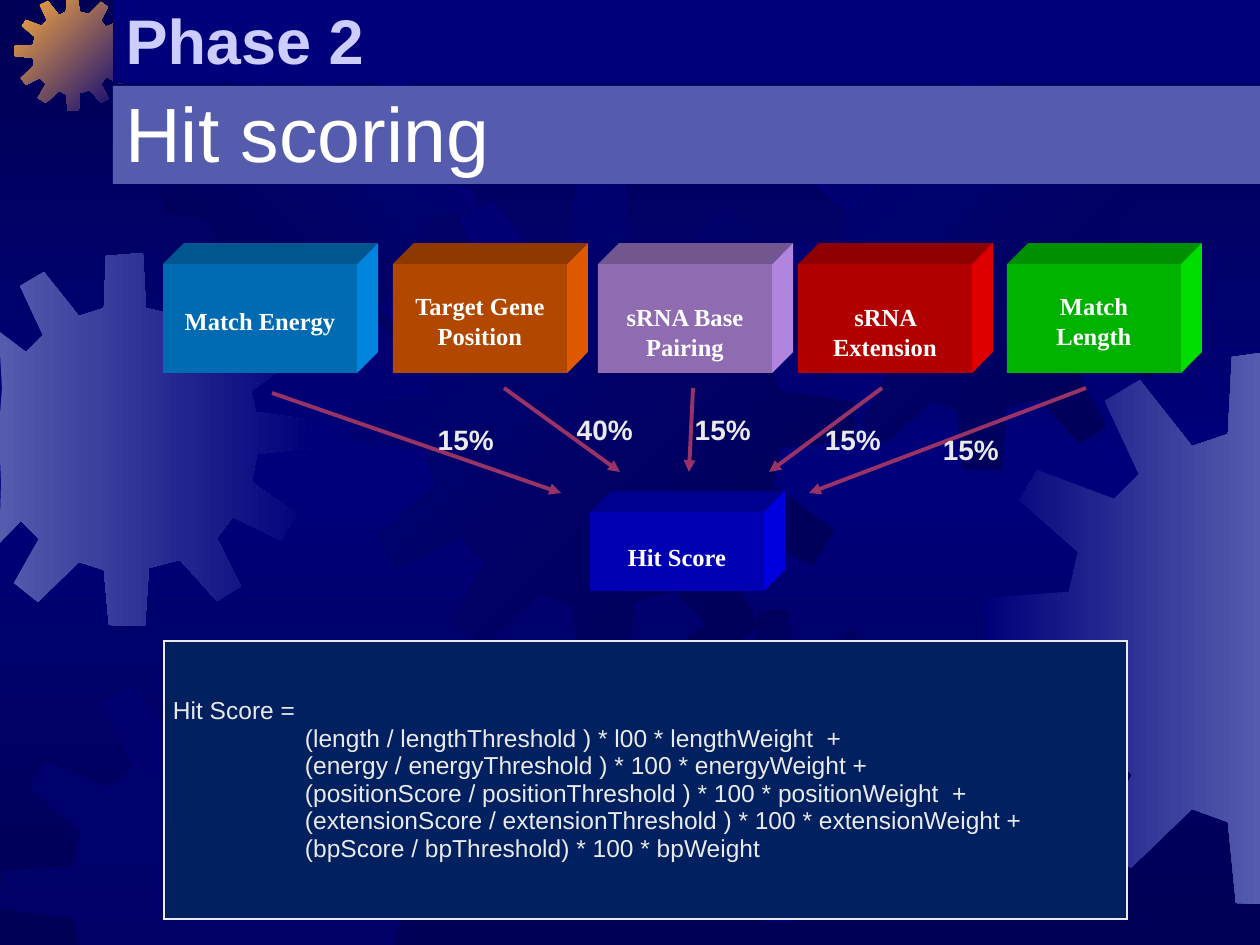
from copy import deepcopy

from lxml.etree import SubElement as Sub
from pptx import Presentation
from pptx.dml.color import RGBColor as RGB
from pptx.enum.shapes import MSO_CONNECTOR as Link, MSO_SHAPE as Kind
from pptx.enum.text import MSO_ANCHOR as Anchor, MSO_AUTO_SIZE as Auto, PP_ALIGN as Align
from pptx.oxml.ns import qn
from pptx.util import Pt

PX = 914400 / 126
WIDE, HIGH = 1260, 945
DEPTH = 21

DARK = RGB(0x00, 0x00, 0x54)
NAVY = RGB(0x00, 0x00, 0x7A)
SLATE = RGB(0x55, 0x5B, 0xAD)
AMBER = RGB(0xFC, 0xAB, 0x40)
LILAC = RGB(0xCC, 0xCC, 0xFF)
WHITE = RGB(0xFF, 0xFF, 0xFF)
PALE = RGB(0xEA, 0xEA, 0xEA)
PLUM = RGB(0x99, 0x33, 0x66)
INK = RGB(0x00, 0x20, 0x60)
BLUE = RGB(0x00, 0x00, 0xFF)
SKY = RGB(0x00, 0x99, 0xFF)
ORANGE = RGB(0xFF, 0x66, 0x00)
MAUVE = RGB(0xCC, 0x99, 0xFF)
RED = RGB(0xFF, 0x00, 0x00)
GREEN = RGB(0x00, 0xFF, 0x00)

# Outline of one gear in a square of side COG
COG = 401
TEETH = [
    (255, 67), (223, 59), (219, 0), (180, 3), (177, 59), (151, 68), (113, 20), (87, 35),
    (112, 88), (94, 106), (38, 85), (25, 107), (68, 145), (61, 174), (1, 178), (0, 210),
    (61, 219), (67, 246), (22, 287), (38, 312), (88, 288), (107, 307), (81, 355), (106, 375),
    (151, 332), (177, 341), (183, 400), (222, 401), (226, 339), (259, 330), (299, 374), (325, 358),
    (299, 306), (316, 284), (368, 309), (384, 281), (336, 246), (342, 216), (401, 210), (400, 180),
    (341, 171), (335, 148), (383, 114), (367, 87), (313, 109), (296, 91), (323, 41), (297, 25),
]

# left, top, size, first colour, last colour, clockwise angle
GEARS = [
    (-61, 253, 373, SLATE, NAVY, 0),
    (15, -5, 116, AMBER, NAVY, 45),
    (164, 49, 312, DARK, NAVY, 315),
    (349, 175, 506, NAVY, DARK, 45),
    (0, 662, 471, NAVY, None, 0),
    (619, 610, 312, DARK, NAVY, 45),
    (779, 67, 403, NAVY, DARK, 45),
    (985, 353, 551, NAVY, SLATE, 0),
]

# left, top, width, height, text, colour, drop of the text
BOXES = [
    (163, 264, 194, 109, "Match Energy", SKY, 4),
    (393, 264, 174, 109, "Target Gene Position", ORANGE, 4),
    (598, 264, 174, 109, "sRNA Base Pairing", MAUVE, 26),
    (798, 264, 174, 109, "sRNA Extension", RED, 26),
    (1007, 264, 174, 109, "Match\vLength", GREEN, 4),
    (590, 512, 174, 79, "Hit Score", BLUE, 10),
]

# arrow start, arrow end, weight, label corner
FLOWS = [
    ((272, 393), (561, 493), "15%", (412, 416)),
    ((504, 388), (620, 472), "40%", (551, 406)),
    ((693, 388), (689, 472), "15%", (669, 406)),
    ((882, 388), (769, 472), "15%", (799, 416)),
    ((1086, 388), (809, 493), "15%", (917, 426)),
]

FORMULA = [
    "Hit Score =",
    "(length / lengthThreshold ) * l00 * lengthWeight  +",
    "(energy / energyThreshold ) * 100 * energyWeight +",
    "(positionScore / positionThreshold ) * 100 * positionWeight  +",
    "(extensionScore / extensionThreshold ) * 100 * extensionWeight +",
    "(bpScore / bpThreshold) * 100 * bpWeight",
]


def emu(*px):
    return [round(n * PX) for n in px]


def shade(tint, part):
    return RGB(*(round(c * part) for c in tint))


def blend(fill, first, last, angle):
    fill.gradient()
    fill.gradient_angle = (360 - angle) % 360
    for stop, tint in zip(fill.gradient_stops, (first, last)):
        stop.color.rgb = tint


class Deck:
    """Holds the current slide and its text styles."""

    def __init__(self):
        self.prs = Presentation()
        self.prs.slide_width, self.prs.slide_height = emu(WIDE, HIGH)
        self.slide = self.prs.slides.add_slide(self.prs.slide_layouts[5])
        self.shapes = self.slide.shapes

    def backdrop(self):
        """Dark at top and bottom, lighter in the middle."""
        blend(self.slide.background.fill, DARK, NAVY, 90)
        stops = self.slide.element.find(".//" + qn("a:gsLst"))
        stops[1].set("pos", "50000")
        end = deepcopy(stops[0])
        end.set("pos", "100000")
        stops.append(end)

    def style(self, frame, size, tint, font="Arial", bold=False, align=Align.LEFT):
        for par in frame.paragraphs:
            par.alignment = align
            for run in par.runs:
                run.font.name, run.font.size = font, Pt(size)
                run.font.bold, run.font.color.rgb = bold, tint

    def paint(self, shape, tint):
        shape.shadow.inherit = False
        shape.line.fill.background()
        shape.fill.solid()
        shape.fill.fore_color.rgb = tint

    def outline(self, points, tint):
        pen = self.shapes.build_freeform(*points[0], scale=PX)
        pen.add_line_segments(points[1:], close=True)
        shape = pen.convert_to_shape()
        self.paint(shape, tint)
        return shape

    def gear(self, left, top, size, first, last, angle):
        """A gear cut off at the slide edges; half clear if it has one colour."""
        points = [(min(max(round(left + x * size / COG), 0), WIDE),
                   min(max(round(top + y * size / COG), 0), HIGH)) for x, y in TEETH]
        shape = self.outline(points, first)
        if last is not None:
            blend(shape.fill, first, last, angle)
        else:
            tone = shape.element.spPr.find(".//" + qn("a:srgbClr"))
            Sub(tone, qn("a:alpha"), val="50000")

    def title(self, text):
        head = self.shapes.title
        self.shapes.element.append(head.element)
        head.left, head.top, head.width, head.height = emu(113, 0, 1147, 83)
        head.fill.solid()
        head.fill.fore_color.rgb = NAVY
        frame = head.text_frame
        frame.text = text
        frame.auto_size, frame.vertical_anchor = Auto.NONE, Anchor.BOTTOM
        self.style(frame, 36, LILAC, bold=True)

    def bar(self, text):
        shape = self.shapes.add_shape(Kind.RECTANGLE, *emu(113, 86, 1147, 98))
        self.paint(shape, SLATE)
        frame = shape.text_frame
        frame.text, frame.vertical_anchor = text, Anchor.BOTTOM
        self.style(frame, 44, WHITE)

    def block(self, x, y, w, h, text, tint, drop):
        """A box with a top and a right face for depth."""
        right, low, d = x + w, y + h, DEPTH
        self.outline([(x, y), (x + d, y - d), (right + d, y - d), (right, y)], shade(tint, 0.56))
        self.outline([(right, y), (right + d, y - d), (right + d, low - d), (right, low)],
                     shade(tint, 0.87))
        front = self.shapes.add_shape(Kind.RECTANGLE, *emu(x, y, w, h))
        self.paint(front, shade(tint, 0.7))
        frame = front.text_frame
        frame.text, frame.vertical_anchor = text, Anchor.MIDDLE
        frame.margin_top, frame.margin_bottom = emu(drop, 0)
        self.style(frame, 14, WHITE, "Times New Roman", True, Align.CENTER)

    def arrow(self, start, end):
        line = self.shapes.add_connector(Link.STRAIGHT, *emu(*start, *end))
        line.line.color.rgb, line.line.width = PLUM, Pt(2.25)
        Sub(line.line._get_or_add_ln(), qn("a:tailEnd"), type="triangle")
        Sub(line.element.spPr, qn("a:effectLst"))

    def label(self, text, spot):
        frame = self.shapes.add_textbox(*emu(*spot, 94, 32)).text_frame
        frame.word_wrap, frame.text = True, text
        self.style(frame, 16, PALE, bold=True, align=Align.RIGHT)

    def table(self, lines):
        grid = self.shapes.add_table(1, 1, *emu(164, 641, 963, 278)).table
        cell = grid.cell(0, 0)
        cell.text_frame.text = "\n".join(lines)
        cell.vertical_anchor = Anchor.MIDDLE
        cell.margin_left, cell.margin_right, cell.margin_top, cell.margin_bottom = emu(9, 9, 0, 0)
        self.style(cell.text_frame, 14, PALE, align=Align.JUSTIFY)
        for par in cell.text_frame.paragraphs[1:]:
            par._p.get_or_add_pPr().set("marL", str(emu(132)[0]))
        props = cell._tc.get_or_add_tcPr()
        for side in ("a:lnL", "a:lnR", "a:lnT", "a:lnB"):
            edge = Sub(props, qn(side), w=str(Pt(1)))
            Sub(Sub(edge, qn("a:solidFill")), qn("a:srgbClr"), val=str(PALE))
        cell.fill.solid()
        cell.fill.fore_color.rgb = INK


def main():
    deck = Deck()
    deck.backdrop()
    for gear in GEARS:
        deck.gear(*gear)
    deck.title("Phase 2")
    deck.bar("Hit scoring")
    for box in BOXES:
        deck.block(*box)
    for start, end, share, spot in FLOWS:
        deck.arrow(start, end)
        deck.label(share, spot)
    deck.table(FORMULA)
    deck.prs.save("out.pptx")


if __name__ == "__main__":
    main()
